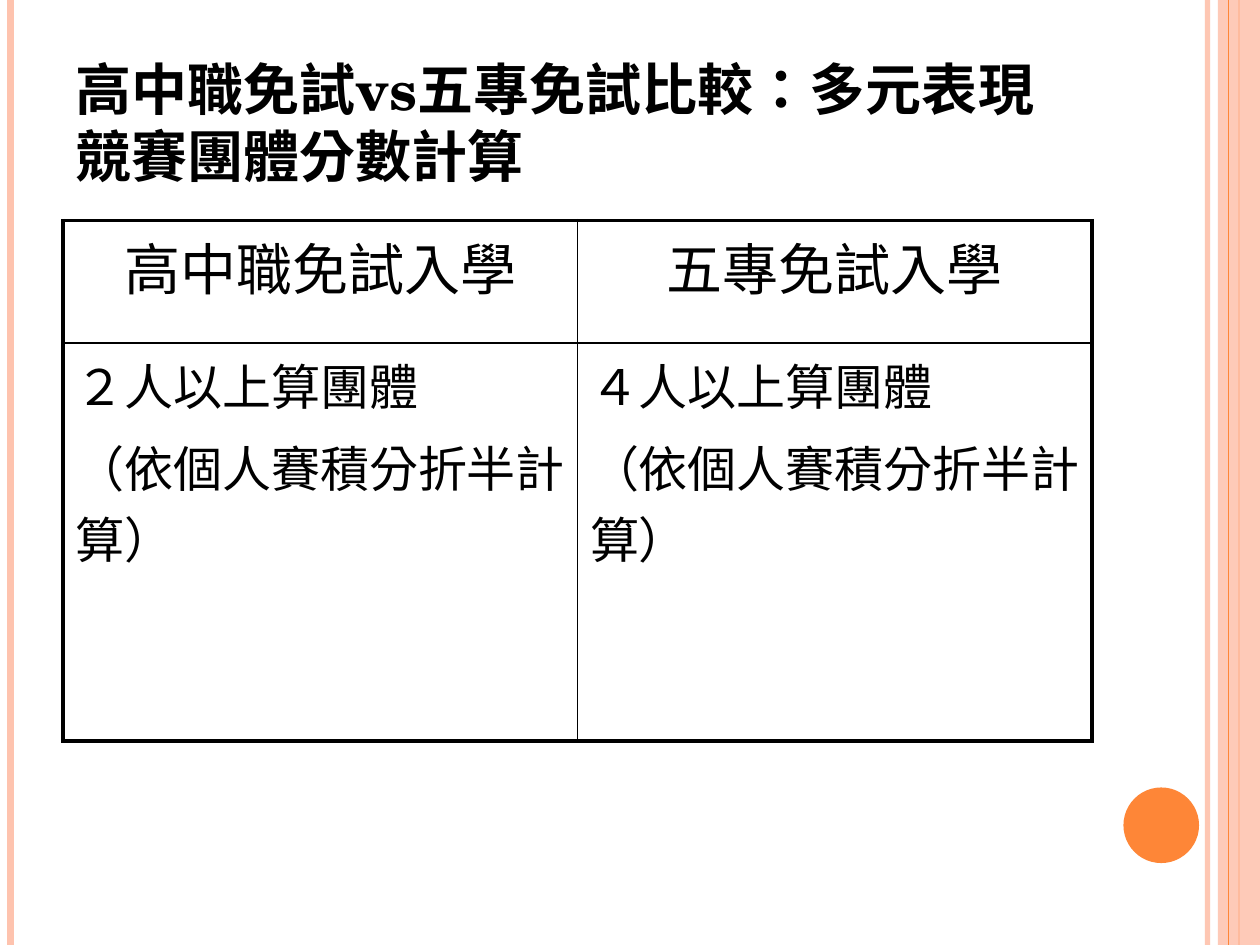
import dataclasses
import typing

import lxml.etree
import pptx
import pptx.dml.color
import pptx.enum.lang
import pptx.enum.shapes
import pptx.enum.text
import pptx.oxml.ns
import pptx.util

Pt = pptx.util.Pt
qn = pptx.oxml.ns.qn
Align = pptx.enum.text.PP_ALIGN
Shape = pptx.enum.shapes.MSO_SHAPE


@dataclasses.dataclass(frozen=True)
class Theme:
    ink: str = "000000"
    peach: str = "FEC3AE"
    orange: str = "FE8637"
    serif: str = "TeX Gyre Schola"
    sans: str = "Noto Sans CJK SC"
    large: float = 32
    body: float = 28
    thick: float = 2.25
    thin: float = 1


THEME = Theme()
WIDTH, HEIGHT = 720, 540
LEFT, SPAN = 36, 588


class Stripe(typing.NamedTuple):
    x: float
    color: str
    weight: float
    alpha: int = 100


class Block(typing.NamedTuple):
    kind: Shape
    x: float
    y: float
    width: float
    height: float
    color: str
    alpha: int = 100


class Row(typing.NamedTuple):
    height: float
    cells: list[list[str]]
    style: dict


BACK = [
    Stripe(690, THEME.peach, 3, 93),
    Stripe(6, THEME.peach, 4.5),
    Stripe(708, THEME.orange, 1.5),
    Block(Shape.RECTANGLE, 696, 0, 24, HEIGHT, THEME.peach, 87),
    Stripe(702, THEME.orange, 0.75),
    Block(Shape.OVAL, 642, 450, 43.2, 43.2, THEME.orange),
]

NOTE = "（依個人賽積分折半計算）"
ROWS = [
    Row(70, [["高中職免試入學"], ["五專免試入學"]],
        dict(size=THEME.large, face=THEME.serif, align=Align.CENTER, before=6)),
    Row(227.5, [["２人以上算團體", NOTE], ["４人以上算團體", NOTE]],
        dict(size=THEME.body, face=THEME.sans, before=6)),
]


def paint(fill, color: str, alpha: int, root) -> None:
    fill.solid()
    fill.fore_color.rgb = pptx.dml.color.RGBColor.from_string(color)
    if alpha < 100:
        tone = next(root.iter(qn("a:srgbClr")))
        lxml.etree.SubElement(tone, qn("a:alpha"), val=str(alpha * 1000))


def write(frame, lines: list[str], *, size: float, face: str, bold: bool = False,
          align: Align = Align.LEFT, before: float = 0) -> None:
    for index, line in enumerate(lines):
        para = frame.add_paragraph() if index else frame.paragraphs[0]
        para.alignment = align
        para.space_before = Pt(before)
        run = para.add_run()
        run.text = line
        font = run.font
        font.size, font.bold, font.name = Pt(size), bold, face
        font.language_id = pptx.enum.lang.MSO_LANGUAGE_ID.TRADITIONAL_CHINESE
        font.color.rgb = pptx.dml.color.RGBColor.from_string(THEME.ink)
        east = lxml.etree.Element(qn("a:ea"), typeface=face)
        run.font._element.find(qn("a:latin")).addnext(east)


def draw_stripe(slide, stripe: Stripe) -> None:
    line = slide.shapes.add_connector(
        pptx.enum.shapes.MSO_CONNECTOR.STRAIGHT,
        Pt(stripe.x), Pt(0), Pt(stripe.x), Pt(HEIGHT))
    line.line.width = Pt(stripe.weight)
    props = line._element.spPr
    paint(line.line.fill, stripe.color, stripe.alpha, props)
    lxml.etree.SubElement(props, qn("a:effectLst"))


def draw_block(slide, block: Block) -> None:
    shape = slide.shapes.add_shape(
        block.kind, Pt(block.x), Pt(block.y), Pt(block.width), Pt(block.height))
    shape.shadow.inherit = False
    shape.line.fill.background()
    paint(shape.fill, block.color, block.alpha, shape._element.spPr)


def edge(cell, sides: dict[str, float]) -> None:
    props = cell._tc.get_or_add_tcPr()
    for index, (side, weight) in enumerate(sides.items()):
        line = lxml.etree.Element(qn(f"a:ln{side}"), w=str(int(Pt(weight))))
        fill = lxml.etree.SubElement(line, qn("a:solidFill"))
        lxml.etree.SubElement(fill, qn("a:srgbClr"), val=THEME.ink)
        props.insert(index, line)


def draw_table(slide, rows: list[Row]) -> None:
    count = len(rows[0].cells)
    table = slide.shapes.add_table(
        len(rows), count, Pt(LEFT), Pt(126), Pt(SPAN),
        Pt(sum(row.height for row in rows))).table
    table.first_row = table.horz_banding = False
    for column in table.columns:
        column.width = Pt(SPAN / count)
    for r, row in enumerate(rows):
        table.rows[r].height = Pt(row.height)
        for c, lines in enumerate(row.cells):
            cell = table.cell(r, c)
            cell.fill.background()
            write(cell.text_frame, lines, **row.style)
            outer = {"L": c == 0, "R": c == count - 1,
                     "T": r == 0, "B": r == len(rows) - 1}
            edge(cell, {side: THEME.thick if out else THEME.thin
                        for side, out in outer.items()})


def draw_title(slide, text: str) -> None:
    frame = slide.shapes.add_textbox(
        Pt(LEFT), Pt(21.6), Pt(SPAN), Pt(90)).text_frame
    frame.word_wrap = True
    frame.vertical_anchor = pptx.enum.text.MSO_ANCHOR.BOTTOM
    write(frame, [text], size=THEME.large, face=THEME.serif, bold=True)


def main() -> None:
    deck = pptx.Presentation()
    deck.slide_width, deck.slide_height = Pt(WIDTH), Pt(HEIGHT)
    slide = deck.slides.add_slide(deck.slide_layouts[6])
    for item in BACK:
        draw = draw_stripe if isinstance(item, Stripe) else draw_block
        draw(slide, item)
    draw_title(slide, "高中職免試vs五專免試比較：多元表現競賽團體分數計算")
    draw_table(slide, ROWS)
    deck.save("out.pptx")


if __name__ == "__main__":
    main()
